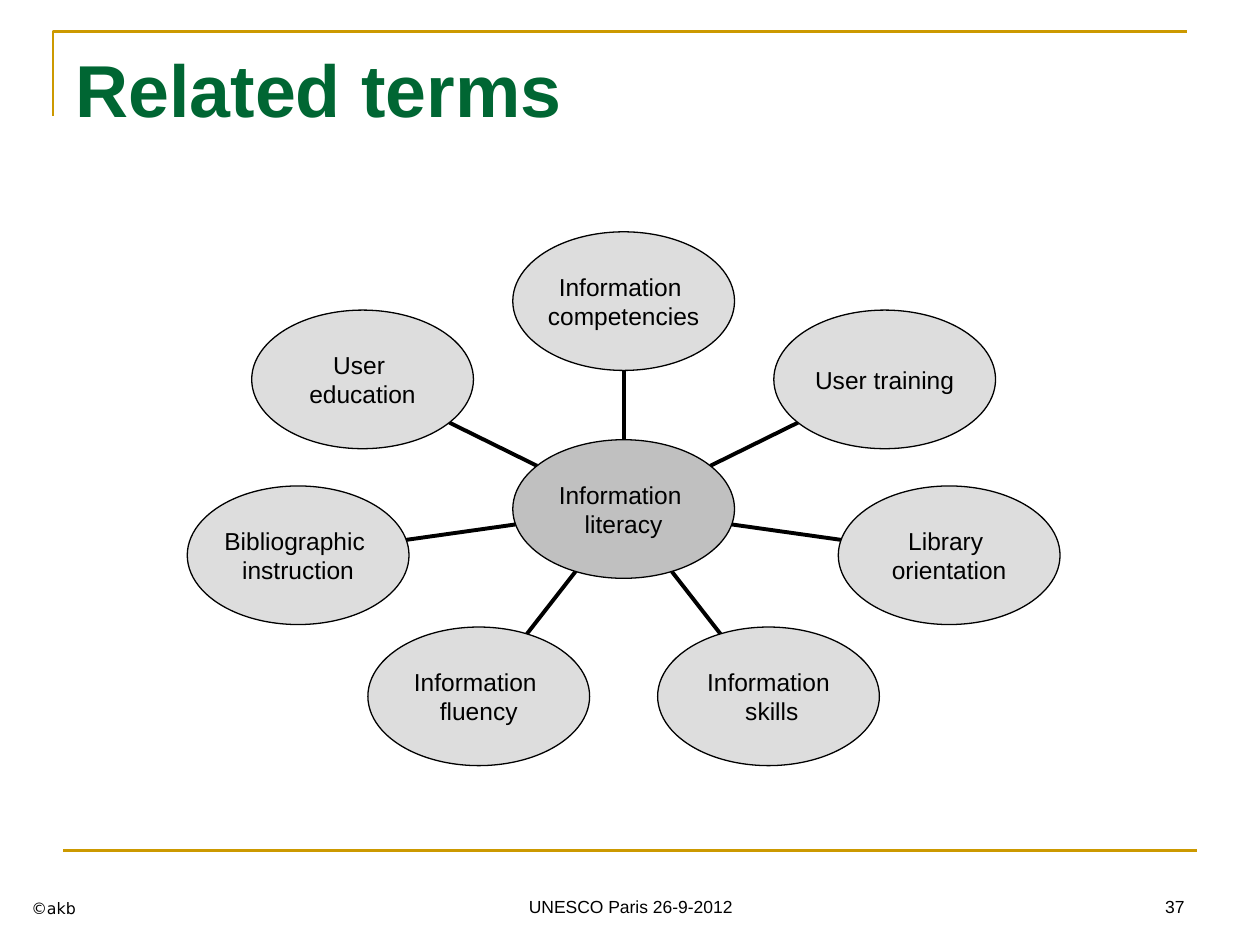
from math import cos, pi, sin

from lxml import etree
from pptx import Presentation
from pptx.dml.color import RGBColor
from pptx.enum.shapes import MSO_CONNECTOR, MSO_SHAPE
from pptx.enum.text import MSO_ANCHOR, PP_ALIGN
from pptx.oxml.ns import qn
from pptx.util import Inches, Pt

LEFT, CENTER, RIGHT = PP_ALIGN.LEFT, PP_ALIGN.CENTER, PP_ALIGN.RIGHT
TOP, MIDDLE, BOTTOM = MSO_ANCHOR.TOP, MSO_ANCHOR.MIDDLE, MSO_ANCHOR.BOTTOM
STRAIGHT, OVAL = MSO_CONNECTOR.STRAIGHT, MSO_SHAPE.OVAL

GOLD = RGBColor(0xCC, 0x99, 0x00)
GREEN = RGBColor(0x00, 0x66, 0x33)
BLACK = RGBColor(0x00, 0x00, 0x00)
LIGHT = RGBColor(0xDD, 0xDD, 0xDD)
GREY = RGBColor(0xC0, 0xC0, 0xC0)

# Wheel geometry in inches: hub center, orbit radii, oval radii
HUB_X, HUB_Y = 4.95, 4.04
ORBIT_X, ORBIT_Y = 2.65, 1.65
OVAL_X, OVAL_Y = 0.88, 0.55

HUB = "Information \nliteracy"
TERMS = [  # clockwise from the top
    "Information \ncompetencies",
    "User training",
    "Library \norientation",
    "Information\n skills",
    "Information \nfluency",
    "Bibliographic \ninstruction",
    "User \neducation",
]


def write(frame, text, size, color=BLACK, align=LEFT, font="Arial", bold=False):
    frame.text = text
    for para in frame.paragraphs:
        para.alignment = align
        for run in para.runs:
            run.font.name = font
            run.font.size = Pt(size)
            run.font.bold = bold
            run.font.color.rgb = color


def add_text(shapes, box, text, size, anchor=BOTTOM, **style):
    frame = shapes.add_textbox(*map(Inches, box)).text_frame
    frame.word_wrap = True
    frame.vertical_anchor = anchor
    write(frame, text, size, **style)


def add_line(shapes, start, end, color, width):
    line = shapes.add_connector(STRAIGHT, *map(Inches, (*start, *end)))
    line.line.color.rgb = color
    line.line.width = Pt(width)
    etree.SubElement(line._element.spPr, qn("a:effectLst"))


def add_corner(shapes):
    pen = shapes.build_freeform(Inches(0.42), Inches(0.92))
    pen.add_line_segments(
        [(Inches(0.42), Inches(0.25)), (Inches(9.42), Inches(0.25))], close=False
    )
    corner = pen.convert_to_shape()
    corner.shadow.inherit = False
    corner.fill.background()
    corner.line.color.rgb = GOLD
    corner.line.width = Pt(1.5)


def add_oval(shapes, x, y, text, fill):
    box = (x - OVAL_X, y - OVAL_Y, 2 * OVAL_X, 2 * OVAL_Y)
    oval = shapes.add_shape(OVAL, *map(Inches, box))
    oval.shadow.inherit = False
    oval.fill.solid()
    oval.fill.fore_color.rgb = fill
    oval.line.color.rgb = BLACK
    oval.line.width = Pt(0.75)
    frame = oval.text_frame
    frame.margin_left = frame.margin_right = 0
    frame.margin_top = frame.margin_bottom = 0
    frame.word_wrap = False
    frame.vertical_anchor = MIDDLE
    write(frame, text, 14, align=CENTER)


def add_wheel(shapes):
    for i, term in enumerate(TERMS):
        turn = 2 * pi * i / len(TERMS)
        dx, dy = sin(turn), -cos(turn)
        x, y = HUB_X + ORBIT_X * dx, HUB_Y + ORBIT_Y * dy
        # Each spoke runs from the hub's rim to the term's rim
        start = (HUB_X + OVAL_X * dx, HUB_Y + OVAL_Y * dy)
        end = (x - OVAL_X * dx, y - OVAL_Y * dy)
        add_line(shapes, start, end, BLACK, 2.25)
        add_oval(shapes, x, y, term, LIGHT)
    add_oval(shapes, HUB_X, HUB_Y, HUB, GREY)


def main():
    deck = Presentation()
    deck.slide_width, deck.slide_height = Inches(10), Inches(7.5)
    shapes = deck.slides.add_slide(deck.slide_layouts[6]).shapes

    # Frame lines
    add_corner(shapes)
    add_line(shapes, (0.5, 6.75), (9.5, 6.75), GOLD, 1.5)

    # Title
    add_text(shapes, (0.5, 0.3, 9, 1.25), "Related terms", 42,
             anchor=TOP, color=GREEN, bold=True)

    # Diagram
    add_wheel(shapes.add_group_shape().shapes)

    # Footer
    add_text(shapes, (0.15, 6.83, 2.33, 0.5), "©akb", 9, font="DejaVu Sans")
    add_text(shapes, (3.42, 6.83, 3.17, 0.5), "UNESCO Paris 26-9-2012", 10, align=CENTER)
    add_text(shapes, (7.17, 6.83, 2.33, 0.5), "37", 10, align=RIGHT)

    deck.save("out.pptx")


if __name__ == "__main__":
    main()
